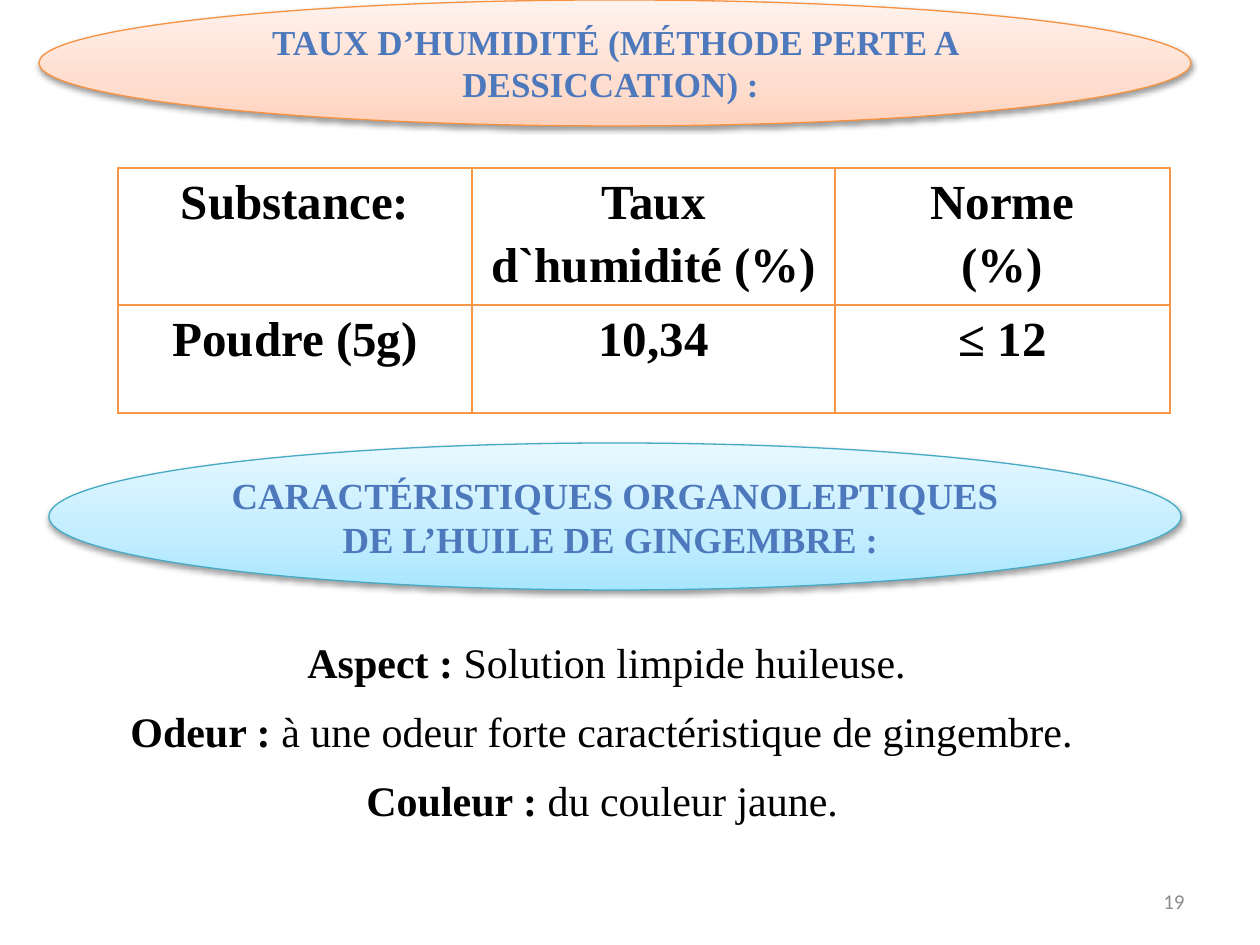
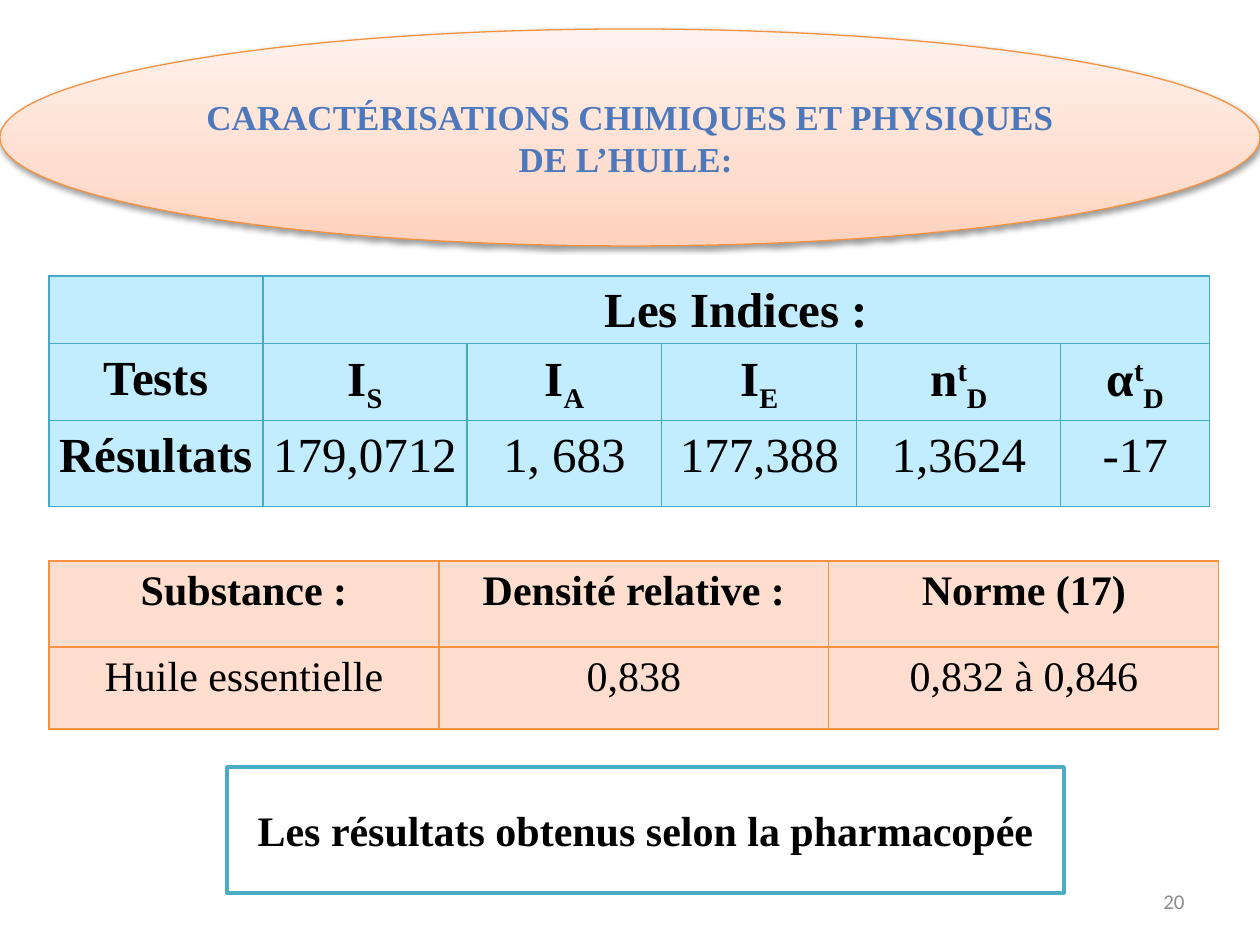
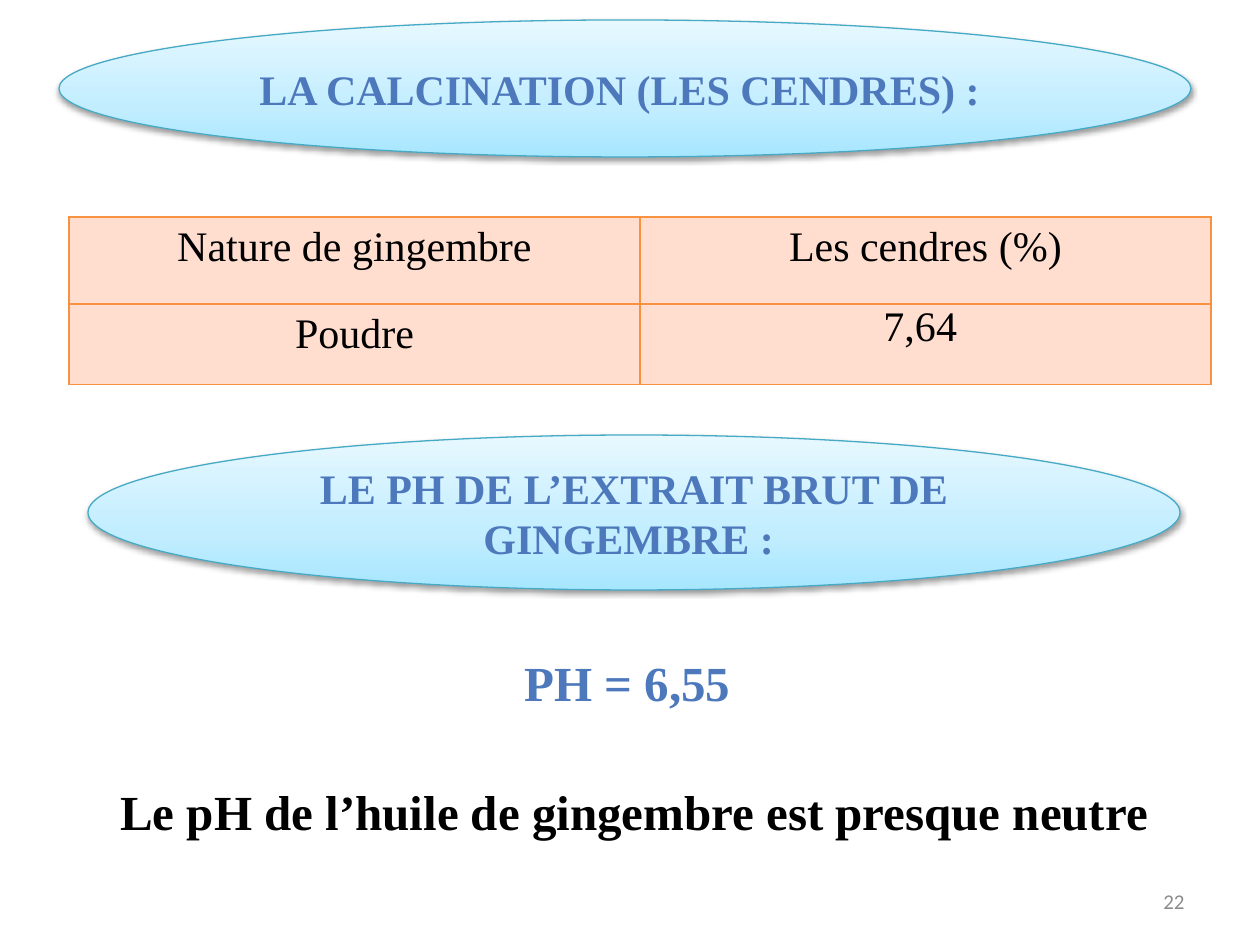
from pptx import Presentation
from pptx.dml.color import RGBColor
from pptx.enum.shapes import MSO_SHAPE
from pptx.enum.text import MSO_ANCHOR, PP_ALIGN
from pptx.oxml import parse_xml
from pptx.oxml.ns import nsdecls, qn
from pptx.util import Emu, Pt

SCALE = 914400 / 126
SERIF, SANS = "Times New Roman", "Calibri"
BLACK, WHITE, GREY, TITLE = "000000", "FFFFFF", "8C8C8C", "4D79BC"
ORANGE, BLUE = "F69240", "46AAC5"
PEACH, SKY = "FFDED0", "C1EDFF"
GLOW = {
    ORANGE: [(0, "FFD2BD"), (35, PEACH), (100, "FFF2ED")],
    BLUE: [(0, "A7E6FF"), (35, SKY), (100, "E7F8FF")],
}
SUB, SUP = -25, 30


def px(*sizes):
    return [Emu(round(size * SCALE)) for size in sizes]


def tint(code):
    return RGBColor.from_string(code)


def node(text):
    """Build a DrawingML element, adding the namespace to its first tag."""
    return parse_xml(text.replace(" ", f" {nsdecls('a')} ", 1))


class Deck:
    """Holds the presentation, its style and the current slide."""

    def __init__(self):
        self.show = Presentation()
        self.show.slide_width, self.show.slide_height = px(1260, 945)
        self.slide = None

    def page(self, number):
        self.slide = self.show.slides.add_slide(self.show.slide_layouts[6])
        self.text(number, (903, 876, 294, 50), 12, color=GREY, face=SANS,
                  align=PP_ALIGN.RIGHT, anchor=MSO_ANCHOR.MIDDLE)

    def put(self, para, parts, size, bold=False, color=BLACK, face=SERIF,
            align=PP_ALIGN.LEFT):
        """Fill a paragraph from a string or (text, baseline percent) pairs."""
        para.alignment = align
        font = para.font
        font.name, font.size, font.bold = face, Pt(size), bold
        font.color.rgb = tint(color)
        if isinstance(parts, str):
            parts = [(parts, 0)]
        for words, base in parts:
            run = para.add_run()
            run.text = words
            if base:
                run.font._element.set("baseline", str(base * 1000))

    def text(self, words, box, size, anchor=MSO_ANCHOR.TOP, **style):
        frame = self.slide.shapes.add_textbox(*px(*box)).text_frame
        frame.word_wrap = True
        frame.vertical_anchor = anchor
        self.put(frame.paragraphs[0], words, size, **style)
        return frame

    def fact(self, label, words, box):
        frame = self.text([(label, 0), (words, 0)], box, 24)
        frame.paragraphs[0].runs[0].font.bold = True

    def shape(self, kind, words, box, size, color):
        shape = self.slide.shapes.add_shape(kind, *px(*box))
        shape.shadow.inherit = False
        frame = shape.text_frame
        frame.word_wrap = True
        frame.vertical_anchor = MSO_ANCHOR.MIDDLE
        self.put(frame.paragraphs[0], words, size, True, color,
                 align=PP_ALIGN.CENTER)
        return shape

    def title(self, words, box, size, edge):
        """Draw a shaded oval heading with a soft shadow."""
        oval = self.shape(MSO_SHAPE.OVAL, words, box, size, TITLE)
        props = oval.element.spPr
        stops = "".join(
            f'<a:gs pos="{at * 1000}"><a:srgbClr val="{code}"/></a:gs>'
            for at, code in GLOW[edge])
        props.find(qn("a:prstGeom")).addnext(node(
            f'<a:gradFill rotWithShape="1"><a:gsLst>{stops}</a:gsLst>'
            '<a:lin ang="16200000" scaled="1"/></a:gradFill>'))
        oval.line.color.rgb = tint(edge)
        oval.line.width = Pt(0.75)
        props.find(qn("a:effectLst")).append(node(
            f'<a:outerShdw blurRad="{Pt(3.1)}" dist="{Pt(1.6)}" dir="5400000" '
            f'rotWithShape="0"><a:srgbClr val="{BLACK}">'
            '<a:alpha val="38000"/></a:srgbClr></a:outerShdw>'))

    def frame(self, words, box, size):
        rect = self.shape(MSO_SHAPE.RECTANGLE, words, box, size, BLACK)
        rect.fill.solid()
        rect.fill.fore_color.rgb = tint(WHITE)
        rect.line.color.rgb = tint("4BACC6")
        rect.line.width = Pt(2)

    def table(self, rows, spot, wide, high, size, fill, edge, width=0.75,
              heads=0, sides=0):
        """Draw a grid whose first heads rows and sides columns are bold."""
        table = self.slide.shapes.add_table(
            len(high), len(wide), *px(*spot, sum(wide), sum(high))).table
        table.first_row = table.horz_banding = False
        for col, size_px in zip(table.columns, px(*wide)):
            col.width = size_px
        for row, size_px in zip(table.rows, px(*high)):
            row.height = size_px
        for r, row in enumerate(rows):
            for c, words in enumerate(row):
                cell = table.cell(r, c)
                self.edge(cell, edge, width)
                cell.fill.solid()
                cell.fill.fore_color.rgb = tint(fill)
                cell.margin_left, cell.margin_right = px(9, 9)
                cell.margin_top = cell.margin_bottom = 0
                lines = words.split("\n") if isinstance(words, str) else [words]
                for i, line in enumerate(lines):
                    paras = cell.text_frame
                    para = paras.add_paragraph() if i else paras.paragraphs[0]
                    para.line_spacing = 1.15
                    if line:
                        self.put(para, line, size, r < heads or c < sides,
                                 align=PP_ALIGN.CENTER)
        return table

    def edge(self, cell, color, width):
        props = cell._tc.get_or_add_tcPr()
        for side in "LRTB":
            props.append(node(
                f'<a:ln{side} w="{Pt(width)}"><a:solidFill>'
                f'<a:srgbClr val="{color}"/></a:solidFill></a:ln{side}>'))


def moisture(deck):
    deck.page("19")
    deck.table([["Substance:", "Taux d`humidité (%)", "Norme\n(%)"],
                ["Poudre (5g)", "10,34", "≤ 12"]],
               (118, 168), (354, 363, 335), (137, 108), 28,
               WHITE, "F79646", 1, heads=2)
    facts = [("Aspect : ", "Solution limpide huileuse.", 295, 680),
             ("Odeur : ", "à une odeur forte caractéristique de gingembre.",
              118, 1033),
             ("Couleur :", " du couleur jaune.", 354, 600)]
    for i, (label, words, left, wide) in enumerate(facts):
        deck.fact(label, words, (left, 630 + 69 * i, wide, 63))
    deck.title("TAUX D’HUMIDITÉ (MÉTHODE PERTE A DESSICCATION) : ",
               (39, 0, 1152, 126), 20, ORANGE)
    deck.title("CARACTÉRISTIQUES ORGANOLEPTIQUES DE L’HUILE DE GINGEMBRE : ",
               (49, 443, 1132, 147), 21, BLUE)


def indices(deck):
    deck.page("20")
    tests = [[("I", 0), (mark, SUB)] for mark in "SAE"]
    tests += [[(sign, 0), ("t", SUP), ("D", SUB)] for sign in "nα"]
    table = deck.table(
        [["", "Les Indices :", "", "", "", ""],
         ["Tests", *tests],
         ["Résultats", "179,0712", "1, 683", "177,388", "1,3624", "-17"]],
        (49, 276), (214, 204, 195, 195, 204, 149), (62, 71, 86), 28,
        SKY, BLUE, heads=2, sides=1)
    table.cell(0, 1).merge(table.cell(0, 5))
    deck.title("CARACTÉRISATIONS CHIMIQUES ET PHYSIQUES DE L’HUILE: ",
               (0, 29, 1260, 217), 20, ORANGE)
    deck.frame("Les résultats obtenus selon la pharmacopée",
               (227, 767, 837, 126), 24)
    deck.table([["Substance :", "Densité relative :", "Norme (17)"],
                ["Huile essentielle", "0,838", "0,832 à 0,846"]],
               (49, 561), [390] * 3, (86, 82), 24, PEACH, ORANGE, heads=1)


def ashes(deck):
    deck.page("22")
    table = deck.table([["Nature de gingembre", "Les cendres (%)"],
                        ["Poudre", "7,64 "]],
                       (69, 217), [571] * 2, (87, 81), 24, PEACH, ORANGE)
    table.cell(1, 1).text_frame.paragraphs[0].line_spacing = 1
    deck.text("PH = 6,55", (512, 646, 286, 72), 28, bold=True, color=TITLE)
    deck.text("Le pH de l’huile de gingembre est presque neutre",
              (108, 775, 1123, 72), 28, bold=True)
    deck.title("LA CALCINATION (LES CENDRES) : ",
               (59, 20, 1132, 137), 24, BLUE)
    deck.title("LE PH DE L’EXTRAIT BRUT DE GINGEMBRE : ",
               (88, 435, 1092, 155), 24, BLUE)


def main():
    deck = Deck()
    for build in (moisture, indices, ashes):
        build(deck)
    deck.show.save("out.pptx")


if __name__ == "__main__":
    main()
